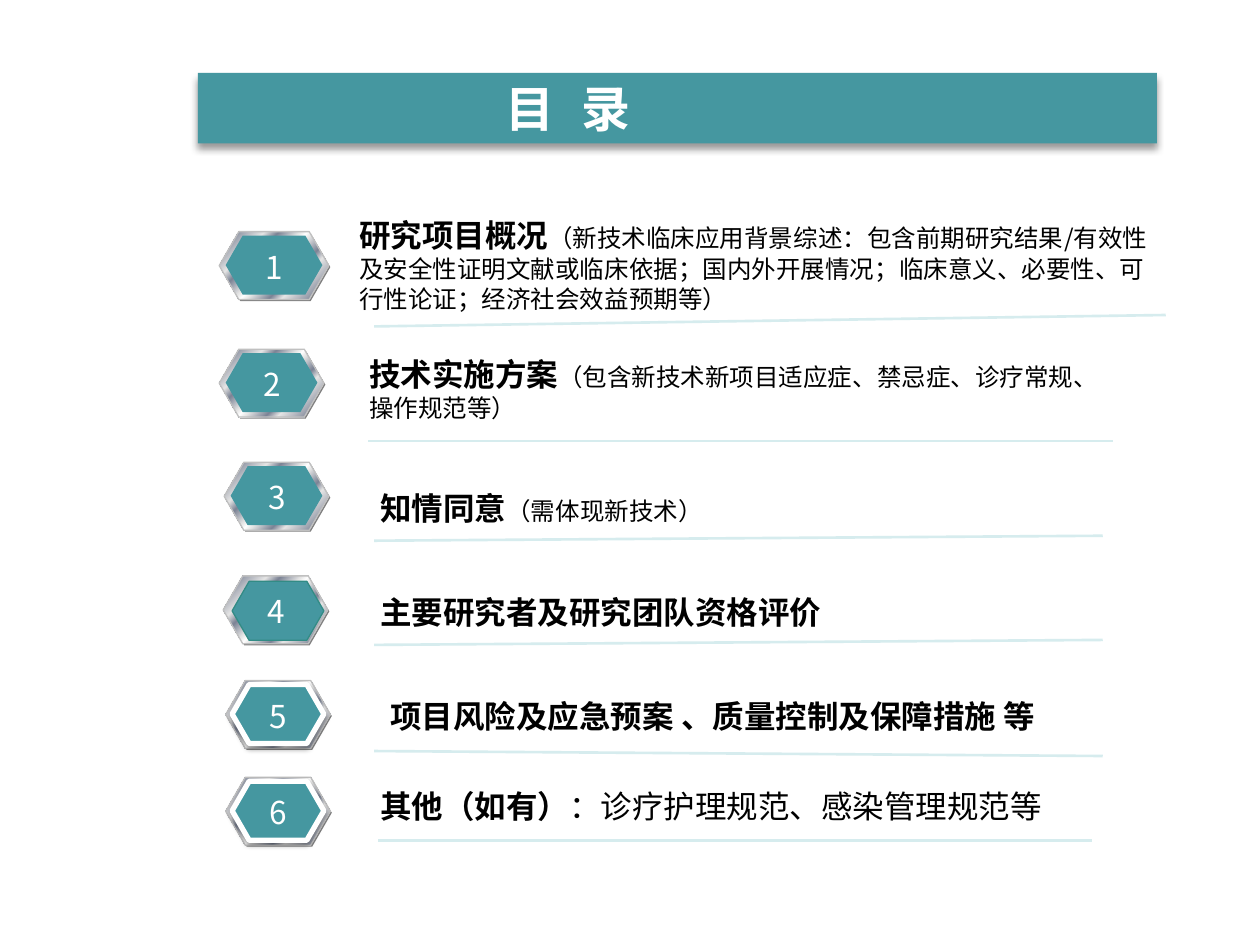
from dataclasses import dataclass

from lxml import etree
from pptx import Presentation
from pptx.dml.color import RGBColor
from pptx.enum.shapes import MSO_CONNECTOR, MSO_SHAPE
from pptx.enum.text import MSO_ANCHOR, MSO_AUTO_SIZE, PP_ALIGN
from pptx.oxml.ns import qn
from pptx.util import Cm, Pt

HEXAGON = MSO_SHAPE.HEXAGON
STRAIGHT = MSO_CONNECTOR.STRAIGHT
LEFT, CENTER = PP_ALIGN.LEFT, PP_ALIGN.CENTER
MIDDLE = MSO_ANCHOR.MIDDLE
GROW = MSO_AUTO_SIZE.SHAPE_TO_FIT_TEXT


@dataclass(frozen=True)
class Theme:
    font: str = "Noto Sans CJK SC"
    plain_font: str = "Arial"
    teal: str = "4597A0"
    teal_edge: str = "328B85"
    white: str = "FFFFFF"
    black: str = "000000"
    under: str = "808080"
    rim: str = "C0C0C0"
    rule: str = "D6ECEE"
    title_size: int = 28
    heading_size: int = 18
    detail_size: int = 14
    metal: tuple = (
        (0, "E6E6E6"), (7, "7D8496"), (26, "E6E6E6"), (34, "7D8496"),
        (46, "E6E6E6"), (50, "FFFFFF"), (54, "E6E6E6"), (66, "7D8496"),
        (73, "E6E6E6"), (92, "7D8496"), (100, "E6E6E6"),
    )


THEME = Theme()


@dataclass(frozen=True)
class Topic:
    badge: tuple
    box: tuple
    rule: tuple
    heading: str
    details: tuple = ()
    detail_size: int = THEME.detail_size
    detail_font: str = THEME.font
    face_shift: tuple = (0, 0)
    face_line: tuple = ()
    face_shadow: bool = False


WHITE_EDGE = (THEME.white, 3)

TOPICS = (
    Topic((4.42, 4.67, 2.21), (6.99, 4.24, 16.79, 2.21), (7.54, 6.58, 23.5, 6.35),
          "研究项目概况",
          ("（新技术临床应用背景综述：包含前期研究结果/有效性及安全性证明文献或临床依据；"
           "国内外开展情况；临床意义、必要性、可行性论证；经济社会效益预期等）",)),
    Topic((4.42, 7.04, 2.11), (7.19, 7.04, 16.76, 1.63), (7.42, 8.89, 22.43, 8.89),
          "技术实施方案",
          ("（包含新技术新项目适应症、禁忌症、诊疗常规、", "操作规范等）")),
    Topic((4.52, 9.32, 2.11), (7.42, 9.73, 12.93, 1.02), (7.54, 10.9, 22.23, 10.8),
          "知情同意", ("（需体现新技术）",)),
    Topic((4.5, 11.61, 2.11), (7.42, 11.84, 11.05, 1.02), (7.54, 13, 22.23, 12.9),
          "主要研究者及研究团队资格评价",
          face_shift=(0.05, 0.03), face_line=(THEME.teal_edge, 0.75)),
    Topic((4.55, 13.72, 2.11), (7.62, 13.92, 14.73, 1.02), (7.54, 15.14, 22.23, 15.24),
          "项目风险及应急预案 、质量控制及保障措施 等",
          face_line=WHITE_EDGE, face_shadow=True),
    Topic((4.55, 15.67, 2.11), (7.42, 15.75, 15.14, 1.02), (7.62, 16.94, 22.02, 16.94),
          "其他（如有）", ("：诊疗护理规范、感染管理规范等",),
          detail_size=THEME.heading_size, detail_font=THEME.plain_font,
          face_line=WHITE_EDGE, face_shadow=True),
)


def rgb(color):
    return RGBColor.from_string(color)


def style_run(run, size, color, bold=False, font=THEME.font):
    run.font.size = Pt(size)
    run.font.bold = bold
    run.font.color.rgb = rgb(color)
    run.font.name = font
    properties = run.font._element
    etree.SubElement(properties, qn("a:ea"), typeface=font)


def cast_shadow(shape, alpha, blur, distance):
    shape.shadow.inherit = False
    effects = shape._element.spPr.find(qn("a:effectLst"))
    shadow = etree.SubElement(
        effects, qn("a:outerShdw"), blurRad=str(Pt(blur)), dist=str(Pt(distance)),
        dir="5400000", rotWithShape="0")
    color = etree.SubElement(shadow, qn("a:srgbClr"), val=THEME.black)
    etree.SubElement(color, qn("a:alpha"), val=str(alpha * 1000))


def fill_metal(shape):
    shape.fill.gradient()
    shape.fill.gradient_angle = 315
    stops = shape._element.spPr.find(".//" + qn("a:gsLst"))
    for stop in list(stops):
        stops.remove(stop)
    for position, color in THEME.metal:
        stop = etree.SubElement(stops, qn("a:gs"), pos=str(position * 1000))
        etree.SubElement(stop, qn("a:srgbClr"), val=color)


def add_hexagon(group, left, top, width, height, color=None, line=()):
    hexagon = group.shapes.add_shape(HEXAGON, Cm(left), Cm(top), Cm(width), Cm(height))
    hexagon.adjustments[0] = 0.289
    hexagon.shadow.inherit = False
    if color:
        hexagon.fill.solid()
        hexagon.fill.fore_color.rgb = rgb(color)
    else:
        fill_metal(hexagon)
    if line:
        hexagon.line.color.rgb = rgb(line[0])
        hexagon.line.width = Pt(line[1])
    else:
        hexagon.line.fill.background()
    return hexagon


def add_text_frame(shapes, left, top, width, height):
    frame = shapes.add_textbox(Cm(left), Cm(top), Cm(width), Cm(height)).text_frame
    frame.word_wrap = True
    frame.auto_size = GROW
    return frame


def add_badge(slide, number, topic):
    left, top, width = topic.badge
    shift_x, shift_y = topic.face_shift
    group = slide.shapes.add_group_shape()
    add_hexagon(group, left + 0.03, top + 0.03, width, 1.37, THEME.under)
    add_hexagon(group, left, top, width, 1.37, line=(THEME.rim, 0.75))
    face = add_hexagon(group, left + 0.13 + shift_x, top + 0.08 + shift_y,
                       width - 0.26, 1.19, THEME.teal, topic.face_line)
    if topic.face_shadow:
        cast_shadow(face, 38, 3.1, 1.6)
    label = add_text_frame(group.shapes, left + width / 2 - 0.53, top + 0.2, 1.07, 1.02)
    paragraph = label.paragraphs[0]
    paragraph.text = str(number)
    paragraph.alignment = CENTER
    style_run(paragraph.runs[0], THEME.heading_size, THEME.white)


def add_description(slide, topic):
    frame = add_text_frame(slide.shapes, *topic.box)
    paragraph = frame.paragraphs[0]
    paragraph.text = topic.heading
    style_run(paragraph.runs[0], THEME.heading_size, THEME.black, bold=True)
    for index, detail in enumerate(topic.details):
        if index:
            paragraph = frame.add_paragraph()
        run = paragraph.add_run()
        run.text = detail
        style_run(run, topic.detail_size, THEME.black, font=topic.detail_font)


def add_rule(slide, ends):
    rule = slide.shapes.add_connector(STRAIGHT, *(Cm(value) for value in ends))
    rule.line.color.rgb = rgb(THEME.rule)
    rule.line.width = Pt(1.5)
    etree.SubElement(rule._element.spPr, qn("a:effectLst"))


def format_title(slide):
    title = slide.shapes.title
    title.left, title.top, title.width, title.height = Cm(3.99), Cm(1.47), Cm(19.33), Cm(1.42)
    title.fill.solid()
    title.fill.fore_color.rgb = rgb(THEME.teal)
    cast_shadow(title, 40, 4, 3)
    frame = title.text_frame
    frame.text = "目 录"
    frame.vertical_anchor = MIDDLE
    frame.margin_left = Cm(6.2)
    frame.margin_top = frame.margin_right = frame.margin_bottom = Cm(0.1)
    paragraph = frame.paragraphs[0]
    paragraph.alignment = LEFT
    style_run(paragraph.runs[0], THEME.title_size, THEME.white, bold=True)
    paragraph.runs[0].font._element.set("spc", "450")


def main():
    deck = Presentation()
    deck.slide_width, deck.slide_height = Cm(25.4), Cm(19.05)
    slide = deck.slides.add_slide(deck.slide_layouts[5])
    format_title(slide)
    for number, topic in enumerate(TOPICS, start=1):
        add_badge(slide, number, topic)
        add_rule(slide, topic.rule)
        add_description(slide, topic)
    deck.save("out.pptx")


if __name__ == "__main__":
    main()
